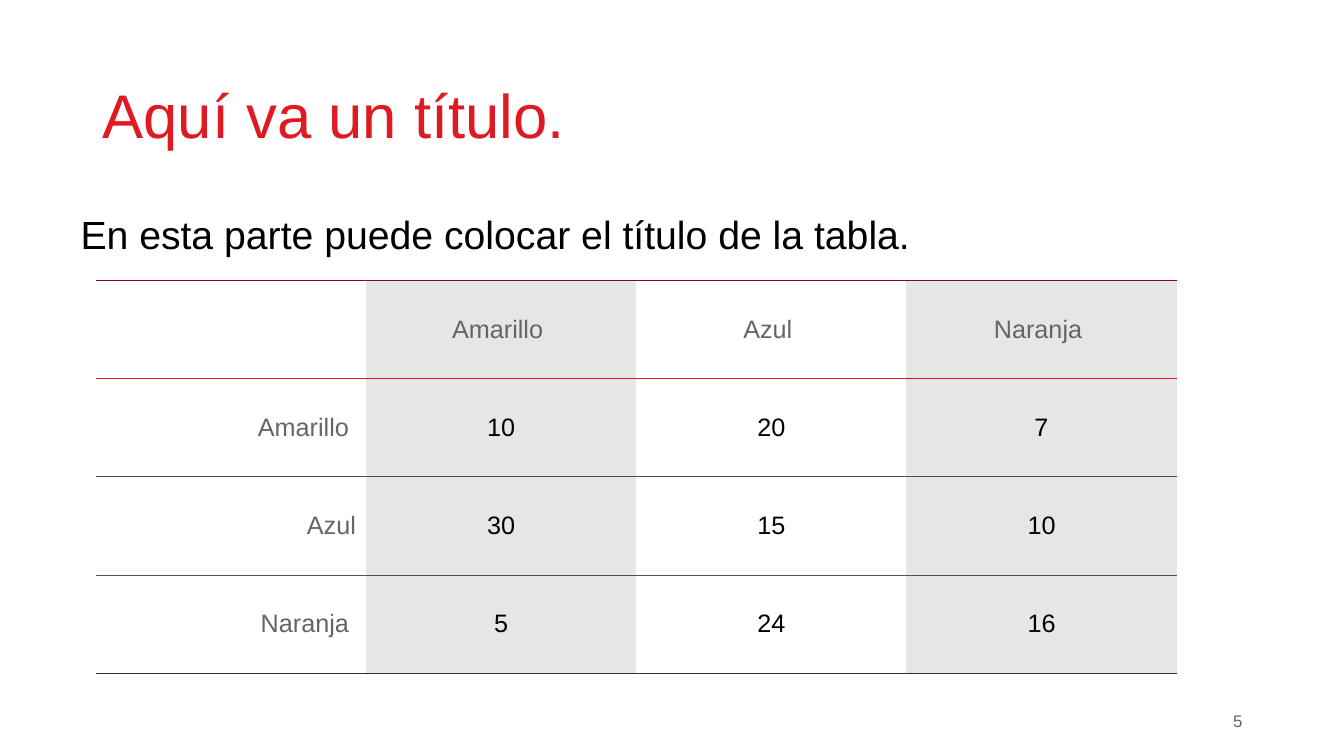
import pptx
import pptx.util
import pptx.dml.color
import pptx.enum.text
import pptx.oxml
from pptx.oxml.ns import nsdecls

RGBColor = pptx.dml.color.RGBColor
RED = RGBColor(0xDF, 0x1A, 0x22)
DARK_RED = RGBColor(0x92, 0x06, 0x09)
GRAY = RGBColor(0x63, 0x65, 0x69)
LINE_GRAY = RGBColor(0x50, 0x50, 0x50)
DARK_GRAY = RGBColor(0x30, 0x30, 0x30)
LIGHT_GRAY = RGBColor(0xE5, 0xE6, 0xE6)
BLACK = RGBColor(0, 0, 0)
ALIGN = pptx.enum.text.PP_ALIGN
MIDDLE = pptx.enum.text.MSO_ANCHOR.MIDDLE
TOP = pptx.enum.text.MSO_ANCHOR.TOP


def write(frame, text, size=18, color=BLACK, align=ALIGN.LEFT, anchor=MIDDLE):
    frame.word_wrap = True
    frame.vertical_anchor = anchor
    paragraph = frame.paragraphs[0]
    paragraph.alignment = align
    run = paragraph.add_run()
    run.text = text
    run.font.name = "Arial"
    run.font.size = pptx.util.Pt(size)
    run.font.color.rgb = color


def set_border(cell, side, color=None):
    paint = f'<a:solidFill><a:srgbClr val="{color}"/></a:solidFill>' if color else "<a:noFill/>"
    cell._tc.get_or_add_tcPr().append(pptx.oxml.parse_xml(
        f'<a:ln{side} {nsdecls("a")} w="9525">{paint}</a:ln{side}>'))


presentation = pptx.Presentation()
presentation.slide_width = pptx.util.Inches(13.33)
presentation.slide_height = pptx.util.Inches(7.5)
slide = presentation.slides.add_slide(presentation.slide_layouts[6])

# Title, table heading and page number
texts = [
    ((0.92, 0.4, 11.5, 1.45), "Aquí va un título.", dict(size=44, color=RED)),
    ((0.7, 2.04, 11.15, 0.6), "En esta parte puede colocar el título de la tabla.",
     dict(size=28, anchor=TOP)),
    ((9.42, 6.95, 3, 0.4), "5", dict(size=12, color=GRAY, align=ALIGN.RIGHT)),
]
for place, text, style in texts:
    box = slide.shapes.add_textbox(*map(pptx.util.Inches, place))
    write(box.text_frame, text, **style)

# Table: header row, label column and values
rows = [
    ["", "Amarillo ", "Azul ", "Naranja "],
    ["Amarillo ", "10", "20", "7"],
    ["Azul", "30", "15", "10"],
    ["Naranja ", "5", "24", "16"],
]
row_lines = [DARK_RED, RED, LINE_GRAY, LINE_GRAY, DARK_GRAY]
place = (0.95, 2.78, 10.72, 3.9)
table = slide.shapes.add_table(4, 4, *map(pptx.util.Inches, place)).table
table.first_row = False
table.horz_banding = False

for row, values in enumerate(rows):
    for column, value in enumerate(values):
        cell = table.cell(row, column)
        cell.vertical_anchor = MIDDLE
        cell.margin_top = cell.margin_bottom = pptx.util.Inches(0.07)
        for side, color in (("L", None), ("R", None),
                            ("T", row_lines[row]), ("B", row_lines[row + 1])):
            set_border(cell, side, color)
        if column % 2:
            cell.fill.solid()
            cell.fill.fore_color.rgb = LIGHT_GRAY
        else:
            cell.fill.background()
        if value:
            write(cell.text_frame, value,
                  color=BLACK if row and column else GRAY,
                  align=ALIGN.CENTER if column else ALIGN.RIGHT)

presentation.save("out.pptx")
